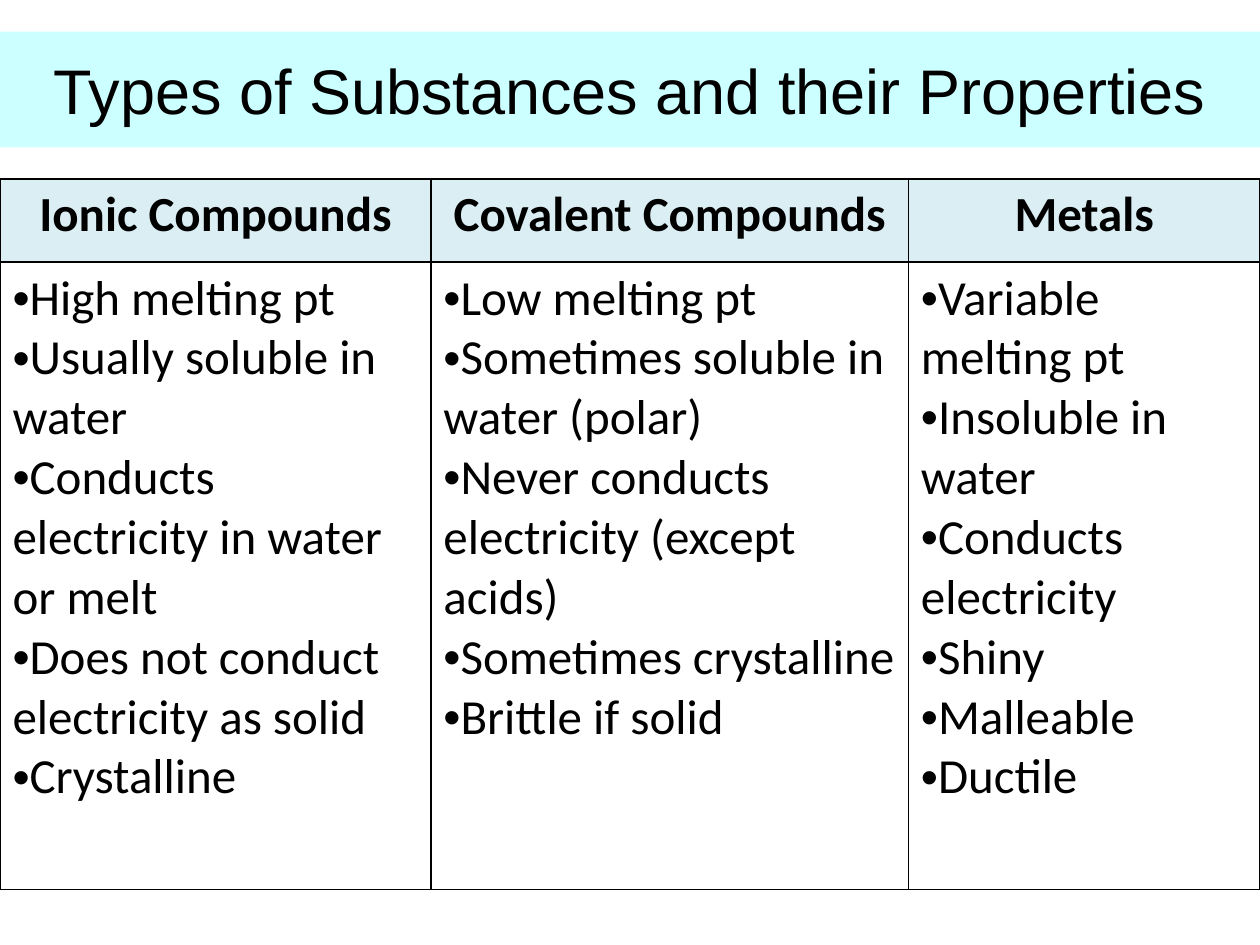
from lxml.etree import SubElement
from pptx import Presentation
from pptx.dml.color import RGBColor
from pptx.enum.shapes import MSO_SHAPE
from pptx.enum.text import MSO_ANCHOR, PP_ALIGN
from pptx.oxml.ns import qn
from pptx.util import Inches, Pt

TITLE = "Types of Substances and their Properties"
SUBSTANCES = [
    ("Ionic Compounds", 3.42, [
        "High melting pt",
        "Usually soluble in water",
        "Conducts electricity in water or melt",
        "Does not conduct electricity as solid",
        "Crystalline",
    ]),
    ("Covalent Compounds", 3.79, [
        "Low melting pt",
        "Sometimes soluble in water (polar)",
        "Never conducts electricity (except acids)",
        "Sometimes crystalline",
        "Brittle if solid",
    ]),
    ("Metals", 2.79, [
        "Variable melting pt",
        "Insoluble in water",
        "Conducts electricity",
        "Shiny",
        "Malleable",
        "Ductile",
    ]),
]
ROW_HEIGHTS = [0.66, 4.98]
TABLE_TOP = 1.42

BLACK = RGBColor(0x00, 0x00, 0x00)
WHITE = RGBColor(0xFF, 0xFF, 0xFF)
TITLE_FILL = RGBColor(0xCC, 0xFF, 0xFF)
HEADER_FILL = RGBColor(0xDB, 0xEE, 0xF4)


def add_text(paragraph, text, font_name, size, bold=False):
    run = paragraph.add_run()
    run.text = text
    run.font.name = font_name
    run.font.size = Pt(size)
    run.font.bold = bold
    run.font.color.rgb = BLACK


def add_bullet(paragraph):
    properties = paragraph._p.get_or_add_pPr()
    SubElement(properties, qn("a:buFont"), typeface="Arial")
    SubElement(properties, qn("a:buChar"), char="•")


def style_cell(cell, fill_color):
    """Give the cell thin black borders and a solid fill."""
    properties = cell._tc.get_or_add_tcPr()
    for side in ("a:lnL", "a:lnR", "a:lnT", "a:lnB"):
        line = SubElement(properties, qn(side), w=str(Pt(1)))
        line_fill = SubElement(line, qn("a:solidFill"))
        SubElement(line_fill, qn("a:srgbClr"), val=str(BLACK))
    cell.fill.solid()
    cell.fill.fore_color.rgb = fill_color


def add_title(slide, width):
    banner = slide.shapes.add_shape(
        MSO_SHAPE.RECTANGLE, 0, Inches(0.25), width, Inches(0.92))
    banner.shadow.inherit = False
    banner.fill.solid()
    banner.fill.fore_color.rgb = TITLE_FILL
    banner.line.fill.background()
    frame = banner.text_frame
    frame.word_wrap = True
    frame.vertical_anchor = MSO_ANCHOR.MIDDLE
    paragraph = frame.paragraphs[0]
    paragraph.alignment = PP_ALIGN.CENTER
    add_text(paragraph, TITLE, "Arial", 36)


def add_properties_table(slide, width):
    table = slide.shapes.add_table(
        len(ROW_HEIGHTS), len(SUBSTANCES), 0, Inches(TABLE_TOP),
        width, Inches(sum(ROW_HEIGHTS))).table
    for row, height in zip(table.rows, ROW_HEIGHTS):
        row.height = Inches(height)

    for index, (name, column_width, traits) in enumerate(SUBSTANCES):
        table.columns[index].width = Inches(column_width)

        header = table.cell(0, index)
        style_cell(header, HEADER_FILL)
        heading = header.text_frame.paragraphs[0]
        heading.alignment = PP_ALIGN.CENTER
        add_text(heading, name, "Calibri", 28, bold=True)

        body = table.cell(1, index)
        style_cell(body, WHITE)
        frame = body.text_frame
        for position, trait in enumerate(traits):
            paragraph = frame.add_paragraph() if position else frame.paragraphs[0]
            add_bullet(paragraph)
            add_text(paragraph, trait, "Calibri", 28)


def main():
    presentation = Presentation()
    presentation.slide_width = Inches(10)
    presentation.slide_height = Inches(7.5)
    slide = presentation.slides.add_slide(presentation.slide_layouts[6])
    add_title(slide, presentation.slide_width)
    add_properties_table(slide, presentation.slide_width)
    presentation.save("out.pptx")


if __name__ == "__main__":
    main()
